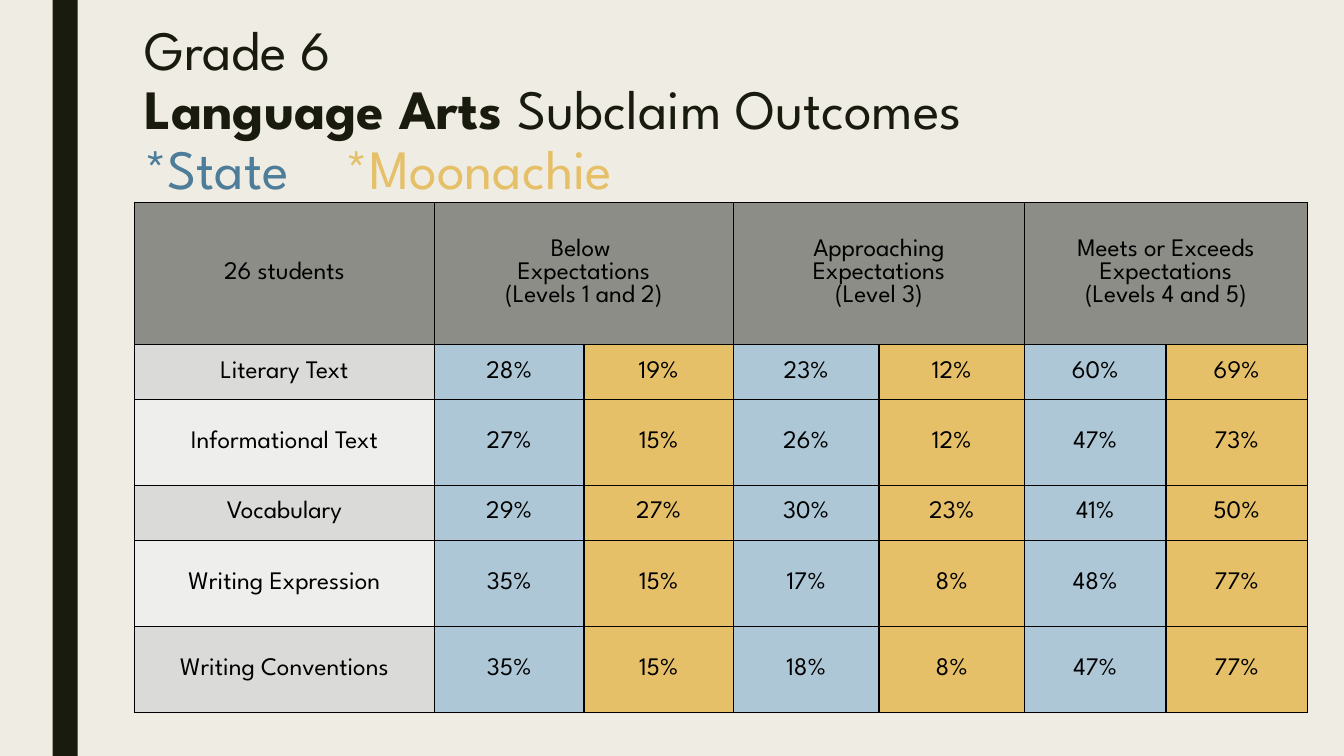
from lxml import etree
from pptx import Presentation
from pptx.dml.color import RGBColor
from pptx.enum import shapes, text
from pptx.oxml import ns
from pptx.util import Pt

FONT = "League Spartan"
DARK, BLACK, GOLD, LIGHT_BLUE = "191B0E", "000000", "E6C069", "ADC7D6"


def color(value):
    return RGBColor.from_string(value)


def add_borders(cell):
    properties = cell._tc.get_or_add_tcPr()
    for side in ("lnL", "lnR", "lnT", "lnB"):
        line = etree.SubElement(properties, ns.qn(f"a:{side}"), w=str(Pt(1)))
        fill = etree.SubElement(line, ns.qn("a:solidFill"))
        etree.SubElement(fill, ns.qn("a:srgbClr"), val=BLACK)


presentation = Presentation()
presentation.slide_width, presentation.slide_height = Pt(960), Pt(540)
slide = presentation.slides.add_slide(presentation.slide_layouts[6])
slide.background.fill.solid()
slide.background.fill.fore_color.rgb = color("EFEDE3")

# Side bar
bar = slide.shapes.add_shape(shapes.MSO_SHAPE.RECTANGLE, Pt(37.5), 0, Pt(18), Pt(540))
bar.shadow.inherit = False
bar.fill.solid()
bar.fill.fore_color.rgb = color(DARK)
bar.line.fill.background()

# Title with the colour key
title = slide.shapes.add_textbox(Pt(96), Pt(12), Pt(756), Pt(117))
title.text_frame.word_wrap = True
paragraph = title.text_frame.paragraphs[0]
paragraph.line_spacing = Pt(42.5)
title_lines = [
    [("Grade 6", DARK, False)],
    [("Language Arts ", DARK, True), ("Subclaim Outcomes", DARK, False)],
    [("*State \t", "4D7D99", False), ("*Moonachie", GOLD, False)],
]
for index, title_line in enumerate(title_lines):
    if index:
        paragraph.add_line_break()
    for words, run_color, bold in title_line:
        run = paragraph.add_run()
        run.text = words
        run.font.name, run.font.size, run.font.bold = FONT, Pt(39.6), bold
        run.font.color.rgb = color(run_color)

# Outcomes table: each level has a state and a district column
rows = [
    ["26 students", "Below \nExpectations\n(Levels 1 and 2)", "",
     "Approaching\nExpectations\n(Level 3)", "",
     "Meets or Exceeds\nExpectations\n(Levels 4 and 5)", ""],
    ["Literary Text", "28%", "19%", "23%", "12%", "60%", "69%"],
    ["Informational Text", "27%", "15%", "26%", "12%", "47%", "73%"],
    ["Vocabulary", "29%", "27%", "30%", "23%", "41%", "50%"],
    ["Writing Expression", "35%", "15%", "17%", "8%", "48%", "77%"],
    ["Writing Conventions", "35%", "15%", "18%", "8%", "47%", "77%"],
]
column_widths = [214.3, 106.8, 106.8, 104, 104, 101, 101]
row_heights = [101.5, 39, 61.7, 39, 61.7, 61.7]
table = slide.shapes.add_table(len(rows), len(column_widths), Pt(96), Pt(144.7),
                               Pt(sum(column_widths)), Pt(sum(row_heights))).table
for column, width in zip(table.columns, column_widths):
    column.width = Pt(width)
for row, height in zip(table.rows, row_heights):
    row.height = Pt(height)

for row_index, row in enumerate(rows):
    for column_index, words in enumerate(row):
        if row_index == 0:
            fill_color = "8C8D86"
        elif column_index == 0:
            fill_color = "DADBD9" if row_index % 2 else "EEEEED"
        else:
            fill_color = LIGHT_BLUE if column_index % 2 else GOLD
        cell = table.cell(row_index, column_index)
        add_borders(cell)
        cell.fill.solid()
        cell.fill.fore_color.rgb = color(fill_color)
        cell.vertical_anchor = text.MSO_ANCHOR.MIDDLE
        cell.margin_left = cell.margin_right = Pt(10)
        cell.margin_top = cell.margin_bottom = Pt(3.6)
        cell.text_frame.text = words
        for paragraph in cell.text_frame.paragraphs:
            paragraph.alignment = text.PP_ALIGN.CENTER
            for run in paragraph.runs:
                run.font.name, run.font.size, run.font.bold = FONT, Pt(18), False
                run.font.color.rgb = color(BLACK)

for column_index in (1, 3, 5):
    table.cell(0, column_index).merge(table.cell(0, column_index + 1))

presentation.save("out.pptx")
